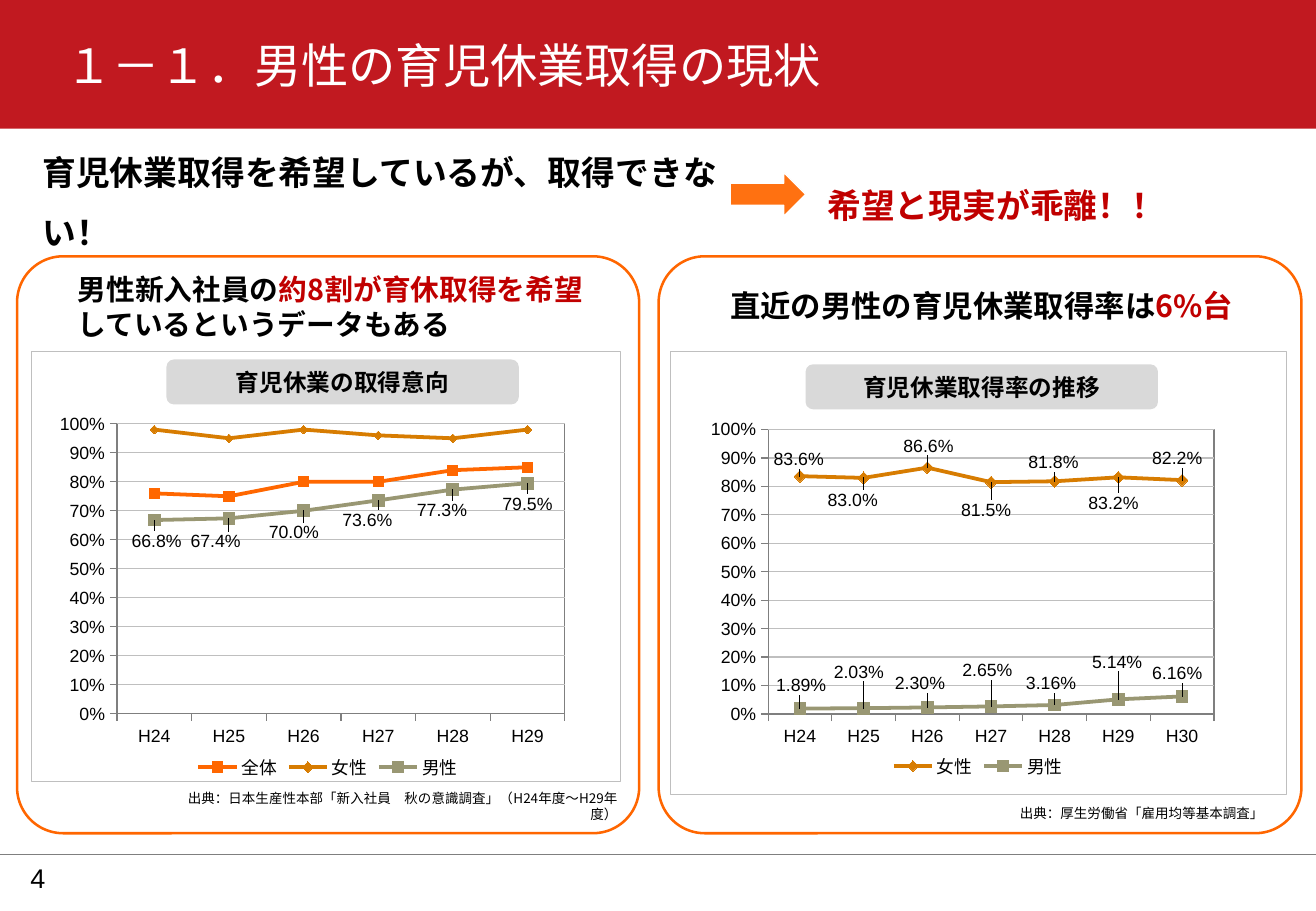
from lxml.etree import SubElement
from pptx import Presentation
from pptx.chart.data import CategoryChartData
from pptx.dml.color import RGBColor
from pptx.enum.chart import XL_CHART_TYPE, XL_LABEL_POSITION, XL_LEGEND_POSITION, XL_MARKER_STYLE, XL_TICK_MARK
from pptx.enum.shapes import MSO_CONNECTOR, MSO_SHAPE
from pptx.enum.text import MSO_ANCHOR, PP_ALIGN
from pptx.oxml import parse_xml
from pptx.oxml.ns import nsdecls, qn
from pptx.util import Inches, Pt

THEME = {
    "latin": "Arial", "japanese": "Noto Sans CJK JP",
    "title": 28, "headline": 20, "label": 14, "number": 16, "chart": 10.5, "source": 8,
    "banner": "C11920", "white": "FFFFFF", "black": "000000", "red": "C00000",
    "arrow": "FF7111", "panel": "FF6600", "frame": "BFBFBF", "tag": "D9D9D9", "axis": "7F7F7F",
    "all": "FF6700", "women": "D77C01", "men": "999773",
}
COLOR = {name: RGBColor.from_string(value) for name, value in THEME.items()
         if isinstance(value, str) and len(value) == 6}
CELL = Inches(0.1)
COLUMNS, ROWS = 108.3, 75

presentation = Presentation()
presentation.slide_width = round(COLUMNS * CELL)
presentation.slide_height = ROWS * CELL
slide = presentation.slides.add_slide(presentation.slide_layouts[6])


def add_box(at, kind=None, fill=None, line=None, weight=0.75, corner=None):
    place = [round(value * CELL) for value in at]
    if kind is None:
        return slide.shapes.add_textbox(*place)
    shape = slide.shapes.add_shape(kind, *place)
    shape.shadow.inherit = False
    if corner:
        shape.adjustments[0] = corner
    if fill:
        shape.fill.solid()
        shape.fill.fore_color.rgb = COLOR[fill]
    else:
        shape.fill.background()
    if line:
        shape.line.color.rgb = COLOR[line]
        shape.line.width = Pt(weight)
    else:
        shape.line.fill.background()
    return shape


def write_text(shape, runs, size, color="black", font="japanese", bold=False,
               align=PP_ALIGN.LEFT, anchor=MSO_ANCHOR.MIDDLE, spacing=None):
    frame = shape.text_frame
    frame.word_wrap = True
    frame.vertical_anchor = anchor
    paragraph = frame.paragraphs[0]
    paragraph.alignment = align
    paragraph.line_spacing = spacing
    paragraph.font.name = THEME[font]
    paragraph.font.size = Pt(size)
    paragraph.font.bold = bold
    paragraph.font.color.rgb = COLOR[color]
    defaults = paragraph._p.pPr.find(qn("a:defRPr"))
    SubElement(defaults, qn("a:ea")).set("typeface", THEME["japanese"])
    for text, accent in runs:
        run = paragraph.add_run()
        run.text = text
        if accent:
            run.font.color.rgb = COLOR[accent]
    return frame


footer_line = slide.shapes.add_connector(
    MSO_CONNECTOR.STRAIGHT, 0, round(70.3 * CELL), presentation.slide_width, round(70.3 * CELL))
footer_line.line.color.rgb = COLOR["axis"]
footer_line.line.width = Pt(0.25)
SubElement(footer_line._element.spPr, qn("a:effectLst"))

add_box((0, 0, COLUMNS, 10.6), MSO_SHAPE.RECTANGLE, "banner")
title = write_text(add_box((5.4, 3, 97.5, 7.1)), [("１－１．男性の育児休業取得の現状", None)],
                   THEME["title"], "white", "latin", anchor=MSO_ANCHOR.TOP)
title.margin_left = title.margin_right = title.margin_top = 0
title.margin_bottom = Inches(0.06)
number = write_text(add_box((2.5, 70.3, 4, 3.9)), [("4", None)], THEME["number"], font="latin")
number.margin_left = number.margin_right = 0

for at, text, color in [
    ((67.1, 13.9, 36.2, 4.2), "希望と現実が乖離！！", "red"),
    ((2.5, 13.5, 60, 4.6), "育児休業取得を希望しているが、取得できない！", "black"),
]:
    write_text(add_box(at), [(text, None)], THEME["headline"], color, bold=True, spacing=1.5)
add_box((60.1, 14.2, 6.2, 3.6), MSO_SHAPE.RIGHT_ARROW, "arrow", "white")

panels = [
    {
        "outline": (1.4, 21.1, 51.2, 47.5), "frame": (2.6, 28.9, 48.5, 35.4),
        "caption": (5.4, 21.9, 43.7, 6.7), "caption_size": 17,
        "message": [("男性新入社員の", None), ("約8割が育休取得を希望", "red"),
                    ("しているというデータもある", None)],
        "tag": (13.7, 29.6, 29, 3.7), "name": "育児休業の取得意向",
        "source": (12.6, 64.7, 39.2, 3.4),
        "credit": "出典：日本生産性本部「新入社員　秋の意識調査」（H24年度～H29年度）",
        "chart": (4.9, 33.3, 44.2, 31.3), "legend": (0.22, 0.9, 0.64, 0.09),
        "series": [
            ("全体", "all", XL_MARKER_STYLE.SQUARE, 6, (0.76, 0.75, 0.8, 0.8, 0.84, 0.85), None, []),
            ("女性", "women", XL_MARKER_STYLE.DIAMOND, 5, (0.98, 0.95, 0.98, 0.96, 0.95, 0.98), None, []),
            ("男性", "men", XL_MARKER_STYLE.SQUARE, 7, (0.668, 0.674, 0.7, 0.736, 0.773, 0.795), "0.0%",
             [(0.2, 1.7), (-1.1, 1.9), (-0.8, 1.8), (-0.9, 1.6), (-0.9, 1.7), (0, 1.7)]),
        ],
    },
    {
        "outline": (54.2, 21.1, 52.9, 47.5), "frame": (55.2, 28.9, 50.7, 36.5),
        "caption": (59.1, 22, 46.1, 6.2), "caption_size": 18,
        "message": [("直近の男性の育児休業取得率は", None), ("6%台", "red")],
        "tag": (66.3, 30, 29, 3.7), "name": "育児休業取得率の推移",
        "source": (72.5, 65.8, 32.5, 2.2), "credit": "出典：厚生労働省「雇用均等基本調査」",
        "chart": (58.5, 33.8, 44, 30.7), "legend": (0.22, 0.9, 0.62, 0.09),
        "series": [
            ("女性", "women", XL_MARKER_STYLE.DIAMOND, 7,
             (0.836, 0.83, 0.866, 0.815, 0.818, 0.832, 0.822), "0.0%",
             [(-0.1, -1.4), (-0.9, 1.8), (0.1, -1.8), (-0.4, 2.3), (-0.1, -1.6), (-0.4, 2.1), (-0.4, -1.8)]),
            ("男性", "men", XL_MARKER_STYLE.SQUARE, 7,
             (0.0189, 0.0203, 0.023, 0.0265, 0.0316, 0.0514, 0.0616), "0.00%",
             [(0.1, -1.9), (-0.4, -3), (-0.6, -2), (-0.3, -3), (-0.3, -1.8), (-0.1, -3.1), (-0.4, -1.9)]),
        ],
    },
]

for panel in panels:
    add_box(panel["frame"], MSO_SHAPE.RECTANGLE, line="frame", weight=0.5)
    add_box(panel["outline"], MSO_SHAPE.ROUNDED_RECTANGLE, line="panel", weight=1.5, corner=0.08)
    write_text(add_box(panel["caption"]), panel["message"], panel["caption_size"], bold=True)
    write_text(add_box(panel["source"]), [(panel["credit"], None)], THEME["source"], align=PP_ALIGN.RIGHT)
    write_text(add_box(panel["tag"], MSO_SHAPE.ROUNDED_RECTANGLE, "tag"), [(panel["name"], None)],
               THEME["label"], bold=True, align=PP_ALIGN.CENTER)

    data = CategoryChartData(number_format="0%")
    data.categories = [f"H{24 + year}" for year in range(len(panel["series"][0][4]))]
    for name, _, _, _, values, _, _ in panel["series"]:
        data.add_series(name, values)
    chart = slide.shapes.add_chart(
        XL_CHART_TYPE.LINE_MARKERS, *[round(value * CELL) for value in panel["chart"]], data).chart
    chart.has_title = False
    chart.font.name = THEME["latin"]
    chart.font.size = Pt(THEME["chart"])
    chart.font.color.rgb = COLOR["black"]
    chart.plots[0].vary_by_categories = False
    chart.has_legend = True
    chart.legend.position = XL_LEGEND_POSITION.BOTTOM
    chart.legend.include_in_layout = False

    for axis in (chart.category_axis, chart.value_axis):
        axis.major_tick_mark = XL_TICK_MARK.OUTSIDE
        axis.minor_tick_mark = XL_TICK_MARK.NONE
        axis.format.line.color.rgb = COLOR["axis"]
        axis.format.line.width = Pt(0.75)
    value_axis = chart.value_axis
    value_axis.minimum_scale, value_axis.maximum_scale, value_axis.major_unit = 0, 1, 0.1
    value_axis.tick_labels.number_format = "0%"
    value_axis.tick_labels.number_format_is_linked = False
    value_axis.major_gridlines.format.line.color.rgb = COLOR["frame"]
    value_axis.major_gridlines.format.line.width = Pt(0.75)

    plot_area = chart._chartSpace.chart.plotArea
    for layout in plot_area.findall(qn("c:layout")):
        plot_area.remove(layout)
    plot_area.append(parse_xml(
        f'<c:spPr {nsdecls("c", "a")}><a:noFill/><a:ln w="9525"><a:solidFill>'
        f'<a:srgbClr val="{THEME["axis"]}"/></a:solidFill></a:ln></c:spPr>'))
    layouts = [(plot_area, 0, (0.107, 0.051, 0.834, 0.763)),
               (chart.legend._element, 1, panel["legend"])]

    for series, (_, color, marker, size, _, label_format, offsets) in zip(chart.series, panel["series"]):
        series.smooth = False
        series.format.line.color.rgb = COLOR[color]
        series.format.line.width = Pt(2.25)
        series.marker.style = marker
        series.marker.size = size
        series.marker.format.fill.solid()
        series.marker.format.fill.fore_color.rgb = COLOR[color]
        series.marker.format.line.color.rgb = COLOR[color]
        if not label_format:
            continue
        labels = series.data_labels
        labels.show_value = True
        labels.number_format = label_format
        labels.number_format_is_linked = False
        for index, (right, down) in enumerate(offsets):
            series.points[index].data_label.position = XL_LABEL_POSITION.CENTER
            label = labels._element.findall(qn("c:dLbl"))[index]
            layouts.append((label, 1, (right / panel["chart"][2], down / panel["chart"][3])))

    for parent, position, values in layouts:
        layout = parse_xml(f'<c:layout {nsdecls("c")}><c:manualLayout/></c:layout>')
        settings = list(zip("xywh", values))
        if len(values) == 4:
            settings = [("xMode", "edge"), ("yMode", "edge")] + settings
        if parent is plot_area:
            settings.insert(0, ("layoutTarget", "inner"))
        for name, value in settings:
            SubElement(layout[0], qn(f"c:{name}")).set("val", str(value))
        parent.insert(position, layout)

presentation.save("out.pptx")
